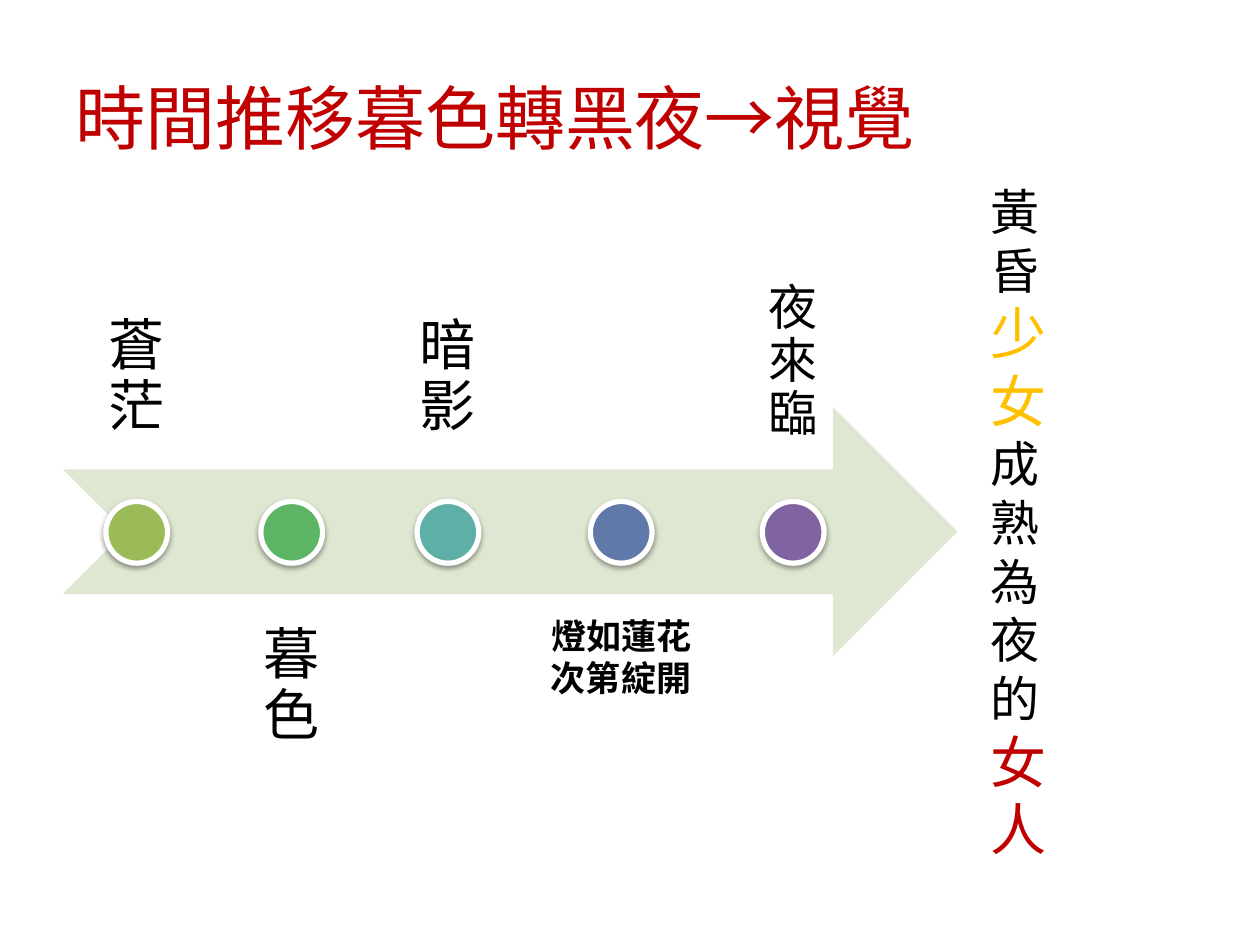
import pptx
import pptx.util
import pptx.dml.color
import pptx.enum.shapes
import pptx.enum.text
import pptx.oxml
import pptx.oxml.ns

Inches = pptx.util.Inches
SHAPE = pptx.enum.shapes.MSO_SHAPE
ANCHOR = pptx.enum.text.MSO_ANCHOR
ALIGN = pptx.enum.text.PP_ALIGN
FONT = "Noto Sans CJK SC"
SHADOW = (
    '<a:outerShdw %s blurRad="39370" dist="20320" dir="5400000" rotWithShape="0">'
    '<a:srgbClr val="000000"><a:alpha val="38000"/></a:srgbClr></a:outerShdw>'
    % pptx.oxml.ns.nsdecls("a")
)


def rgb(color):
    return pptx.dml.color.RGBColor.from_string(color)


def add_run(p, text, size, color="000000", bold=False):
    r = p.add_run()
    r.text = text
    for name, value in {"name": FONT, "size": pptx.util.Pt(size), "bold": bold}.items():
        setattr(r.font, name, value)
    r.font.color.rgb = rgb(color)
    ea = pptx.oxml.parse_xml('<a:ea %s typeface="%s"/>' % (pptx.oxml.ns.nsdecls("a"), FONT))
    r.font._element.append(ea)


prs = pptx.Presentation()
prs.slide_width, prs.slide_height = Inches(10), Inches(7.5)
s = prs.slides.add_slide(prs.slide_layouts[5])

title = s.shapes.title
box = {"left": 0.5, "top": 0.3, "width": 9, "height": 1.25}
for name, value in box.items():
    setattr(title, name, Inches(value))
title.text_frame.vertical_anchor = ANCHOR.MIDDLE
p = title.text_frame.paragraphs[0]
p.alignment = ALIGN.LEFT
add_run(p, "時間推移暮色轉黑夜→視覺", 40, "C00000")

timeline = s.shapes.add_group_shape()
arrow = timeline.shapes.add_shape(
    SHAPE.NOTCHED_RIGHT_ARROW, Inches(0.5), Inches(3.23), Inches(7.1), Inches(1.98))
arrow.shadow.inherit = False
arrow.fill.solid()
arrow.fill.fore_color.rgb = rgb("DEE7D1")
arrow.line.fill.background()

stages = [
    ("蒼茫", 0.5, 1.17, 32, 0.25, 0.9, False, "9BBB59"),
    ("暮色", 1.73, 1.17, 32, 0.25, 0.9, False, "5CB565"),
    ("暗影", 2.97, 1.17, 32, 0.25, 0.9, False, "5EAFA6"),
    ("燈如蓮花次第綻開", 4.2, 1.46, 20, 0.16, 1.0, True, "6179A8"),
    ("夜來臨", 5.71, 1.17, 28, 0.22, 0.9, False, "8064A2"),
]
dot = 0.49
for i, (text, left, width, size, inset, spacing, bold, color) in enumerate(stages):
    above = i % 2 == 0
    label = timeline.shapes.add_textbox(
        Inches(left), Inches(1.75 if above else 4.72), Inches(width), Inches(1.98))
    tf = label.text_frame
    tf.word_wrap = True
    tf.vertical_anchor = ANCHOR.BOTTOM if above else ANCHOR.TOP
    for side in ("left", "top", "right", "bottom"):
        setattr(tf, "margin_" + side, Inches(inset))
    p = tf.paragraphs[0]
    p.alignment = ALIGN.CENTER
    p.line_spacing = spacing
    add_run(p, text, size, bold=bold)

    sp = timeline.shapes.add_shape(
        SHAPE.OVAL, Inches(left + (width - dot) / 2), Inches(3.98), Inches(dot), Inches(dot))
    sp.fill.solid()
    sp.fill.fore_color.rgb = rgb(color)
    sp.line.color.rgb = rgb("FFFFFF")
    sp.line.width = pptx.util.Pt(3)
    sp.shadow.inherit = False
    effects = sp._element.spPr.find(pptx.oxml.ns.qn("a:effectLst"))
    effects.append(pptx.oxml.parse_xml(SHADOW))

verse = s.shapes.add_textbox(Inches(7.76), Inches(1.39), Inches(1.02), Inches(5.86))
tf = verse.text_frame
tf.word_wrap = True
tf.auto_size = pptx.enum.text.MSO_AUTO_SIZE.SHAPE_TO_FIT_TEXT
parts = [("黃昏", 28, "000000"), ("少女", 32, "FFC000"),
         ("成熟為夜的", 28, "000000"), ("女人", 32, "C00000")]
p = None
for text, size, color in parts:
    for char in text:
        p = tf.add_paragraph() if p is not None else tf.paragraphs[0]
        add_run(p, char, size, color)

prs.save("out.pptx")
